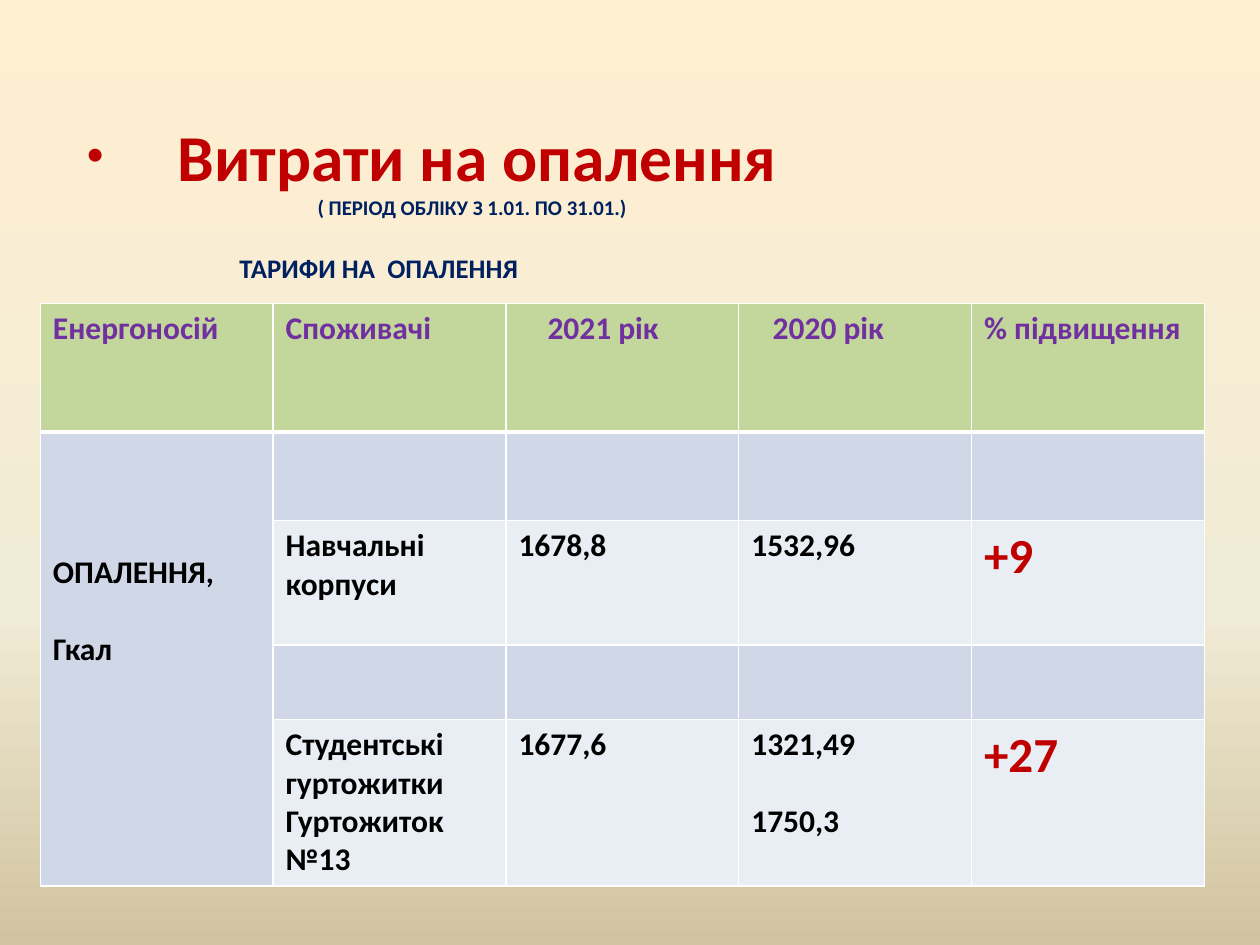
from dataclasses import dataclass

from lxml import etree
from pptx import Presentation
from pptx.dml.color import RGBColor
from pptx.enum.text import MSO_ANCHOR, MSO_AUTO_SIZE, PP_ALIGN
from pptx.oxml import parse_xml
from pptx.oxml.ns import nsdecls, qn
from pptx.util import Inches, Pt

LEFT, TOP = PP_ALIGN.LEFT, MSO_ANCHOR.TOP
NO_FIT = MSO_AUTO_SIZE.NONE

FONT = "Calibri"
RED = RGBColor(0xC0, 0x00, 0x00)
NAVY = RGBColor(0x00, 0x20, 0x60)
PURPLE = RGBColor(0x70, 0x30, 0xA0)
BLACK = RGBColor(0x00, 0x00, 0x00)
WHITE = RGBColor(0xFF, 0xFF, 0xFF)
GREEN = RGBColor(0xC3, 0xD6, 0x9B)
BAND_DARK = RGBColor(0xD0, 0xD8, 0xE8)
BAND_LIGHT = RGBColor(0xE9, 0xED, 0xF4)
BACKGROUND = [(0, "FFEFD1"), (65, "F0EBD5"), (100, "D1C39F")]

WIDTH, HEIGHT = 10, 7.5
COLUMNS = 5
TABLE_LEFT, TABLE_TOP, TABLE_WIDTH = 0.32, 2.41, 9.24
ROW_HEIGHTS = [1.02, 0.7, 0.99, 0.59, 1.32]
BODY_SIZE = 18
LINE = 22  # height of one body line, in points


@dataclass
class Entry:
    """Content of one table cell; gap is the space between paragraphs."""
    row: int
    col: int
    lines: list[str]
    size: float = BODY_SIZE
    color: RGBColor = BLACK
    indent: float = 0
    drop: float = 0
    gap: float = 0


ENTRIES = [
    Entry(0, 0, ["Енергоносій"], color=PURPLE),
    Entry(0, 1, ["Споживачі"], color=PURPLE),
    Entry(0, 2, ["2021 рік"], color=PURPLE, indent=0.23),
    Entry(0, 3, ["2020 рік"], color=PURPLE, indent=0.17),
    Entry(0, 4, ["% підвищення"], color=PURPLE),
    Entry(1, 0, ["ОПАЛЕННЯ,", "Гкал"], drop=3 * LINE, gap=LINE),
    Entry(2, 1, ["Навчальні корпуси"]),
    Entry(2, 2, ["1678,8"]),
    Entry(2, 3, ["1532,96"]),
    Entry(2, 4, ["+9"], size=28, color=RED),
    Entry(4, 1, ["Студентські гуртожитки", "Гуртожиток", "№13"]),
    Entry(4, 2, ["1677,6"]),
    Entry(4, 3, ["1321,49", "1750,3"], gap=LINE),
    Entry(4, 4, ["+27"], size=28, color=RED),
]


def add_text(tf, text: str, *, size: float, color: RGBColor, first: bool = False,
             before: float = 0, margin: float = 0, hanging: bool = False):
    """Write one bold paragraph and return it."""
    p = tf.paragraphs[0] if first else tf.add_paragraph()
    p.alignment = LEFT
    p.space_before = Pt(before)
    pPr = p._p.get_or_add_pPr()
    pPr.set("marL", str(Inches(margin)))
    pPr.set("indent", str(-Inches(margin) if hanging else 0))
    r = p.add_run()
    r.text = text
    r.font.name = FONT
    r.font.size = Pt(size)
    r.font.bold = True
    r.font.color.rgb = color
    return p


def add_bullet(p, percent: int) -> None:
    pPr = p._p.get_or_add_pPr()
    etree.SubElement(pPr, qn("a:buSzPct")).set("val", str(percent * 1000))
    etree.SubElement(pPr, qn("a:buFont")).set("typeface", "Arial")
    etree.SubElement(pPr, qn("a:buChar")).set("char", "•")


def set_background(slide) -> None:
    stops = "".join(
        f'<a:gs pos="{pos * 1000}"><a:srgbClr val="{color}"/></a:gs>'
        for pos, color in BACKGROUND)
    slide._element.cSld.insert(0, parse_xml(
        f'<p:bg {nsdecls("p", "a")}><p:bgPr><a:gradFill rotWithShape="1">'
        f'<a:gsLst>{stops}</a:gsLst><a:lin ang="5400000" scaled="0"/>'
        '</a:gradFill><a:effectLst/></p:bgPr></p:bg>'))


def set_borders(cell, top: float, bottom: float) -> None:
    tcPr = cell._tc.get_or_add_tcPr()
    widths = {"L": 1, "R": 1, "T": top, "B": bottom}
    for i, (side, width) in enumerate(widths.items()):
        tcPr.insert(i, parse_xml(
            f'<a:ln{side} {nsdecls("a")} w="{Pt(width)}"><a:solidFill>'
            f'<a:srgbClr val="{WHITE}"/></a:solidFill></a:ln{side}>'))


def fill_entry(table, entry: Entry) -> None:
    cell = table.cell(entry.row, entry.col)
    cell.margin_left = Inches(0.1 + entry.indent)
    cell.margin_top = Inches(0.05) + Pt(entry.drop)
    for i, line in enumerate(entry.lines):
        add_text(cell.text_frame, line, size=entry.size, color=entry.color,
                 first=i == 0, before=entry.gap if i else 0)


def add_title(slide) -> None:
    sp = slide.shapes.title
    sp.left, sp.top = Inches(0.59), Inches(0.84)
    sp.width, sp.height = Inches(0.9 * WIDTH), Inches(1.26)
    tf = sp.text_frame
    tf.word_wrap = True
    tf.auto_size = NO_FIT
    tf.vertical_anchor = TOP
    tf.margin_top = Inches(0.08)
    heading = add_text(tf, "Витрати на опалення", size=37.4, color=RED,
                       first=True, margin=0.72, hanging=True)
    add_bullet(heading, 73)
    add_text(tf, "( ПЕРІОД ОБЛІКУ З 1.01. ПО 31.01.)", size=11.9,
             color=NAVY, margin=1.83)
    add_text(tf, "ТАРИФИ НА  ОПАЛЕННЯ", size=15.3, color=NAVY,
             before=18.5, margin=1.21)


def add_cost_table(slide) -> None:
    table = slide.shapes.add_table(
        len(ROW_HEIGHTS), COLUMNS, Inches(TABLE_LEFT), Inches(TABLE_TOP),
        Inches(TABLE_WIDTH), Inches(sum(ROW_HEIGHTS))).table
    for column in table.columns:
        column.width = Inches(TABLE_WIDTH / COLUMNS)

    # Row heights, banded fills and borders
    for i, height in enumerate(ROW_HEIGHTS):
        table.rows[i].height = Inches(height)
        band = BAND_DARK if i % 2 else BAND_LIGHT
        for j in range(COLUMNS):
            cell = table.cell(i, j)
            cell.fill.solid()
            cell.fill.fore_color.rgb = GREEN if i == 0 else band
            set_borders(cell, top=3 if i == 1 else 1, bottom=3 if i == 0 else 1)

    # The energy source spans all consumers
    table.cell(1, 0).merge(table.cell(len(ROW_HEIGHTS) - 1, 0))
    for entry in ENTRIES:
        fill_entry(table, entry)


def main() -> None:
    prs = Presentation()
    prs.slide_width, prs.slide_height = Inches(WIDTH), Inches(HEIGHT)
    slide = prs.slides.add_slide(prs.slide_layouts[5])
    set_background(slide)
    add_title(slide)
    add_cost_table(slide)
    prs.save("out.pptx")


if __name__ == "__main__":
    main()
